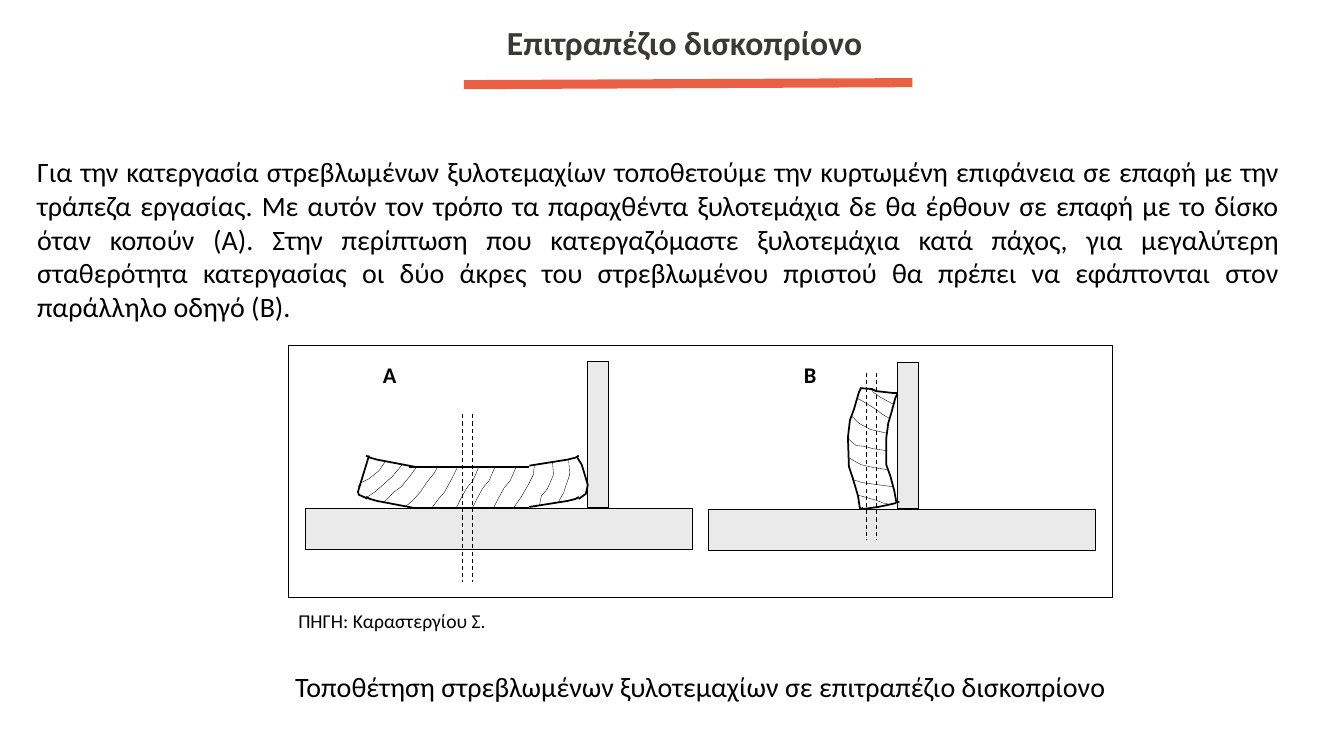
from lxml import etree
from pptx import Presentation
from pptx.dml.color import RGBColor
from pptx.enum.dml import MSO_LINE
from pptx.enum.shapes import MSO_CONNECTOR, MSO_SHAPE
from pptx.enum.text import MSO_ANCHOR, PP_ALIGN
from pptx.oxml.ns import qn
from pptx.util import Inches, Pt

STRAIGHT = MSO_CONNECTOR.STRAIGHT
RECTANGLE = MSO_SHAPE.RECTANGLE
DASH = MSO_LINE.DASH
TOP, MIDDLE = MSO_ANCHOR.TOP, MSO_ANCHOR.MIDDLE
LEFT, CENTER, JUSTIFY = PP_ALIGN.LEFT, PP_ALIGN.CENTER, PP_ALIGN.JUSTIFY

BLACK, GRAY, CORAL, CHARCOAL = "000000", "EAEAEA", "EA6045", "3B3838"
OUTLINE, GRAIN, THIN = 1.25, 0.25, 0.75
TABLE_TOP, TABLE_WIDTH, TABLE_HEIGHT = 1.45, 3.84, 0.41
FENCE_WIDTH = 0.21
BLADE_EDGES, BLADE_LENGTH = (1.56, 1.66), 1.66

TITLE = "Επιτραπέζιο δισκοπρίονο"
BODY = (
    "Για την κατεργασία στρεβλωμένων ξυλοτεμαχίων τοποθετούμε την κυρτωμένη "
    "επιφάνεια σε επαφή με την τράπεζα εργασίας. Με αυτόν τον τρόπο τα "
    "παραχθέντα ξυλοτεμάχια δε θα έρθουν σε επαφή με το δίσκο όταν κοπούν (Α). "
    "Στην περίπτωση που κατεργαζόμαστε ξυλοτεμάχια κατά πάχος, για μεγαλύτερη "
    "σταθερότητα κατεργασίας οι δύο άκρες του στρεβλωμένου πριστού θα πρέπει "
    "να εφάπτονται στον παράλληλο οδηγό (Β)."
)
SOURCE = "ΠΗΓΗ: Καραστεργίου Σ."
CAPTION = "Τοποθέτηση στρεβλωμένων ξυλοτεμαχίων σε επιτραπέζιο δισκοπρίονο"

FLAT_FACE = [
    [(0.6, 0.93), (0.64, 0.95), (0.71, 0.97), (1.08, 1.04)],
    [(1.03, 1.04), (2.22, 1.04)],
    [(2.22, 1.03), (2.6, 0.97), (2.68, 0.95), (2.71, 0.93)],
]
FLAT_ENDS = [
    [(0.63, 0.93), (0.52, 1.29), (0.53, 1.32), (0.6, 1.35), (0.61, 1.36)],
    [(2.69, 0.94), (2.74, 1.02), (2.8, 1.22), (2.78, 1.31), (2.71, 1.36)],
]
FLAT_THICKNESS = 0.41
FLAT_GRAIN = [
    [(0.79, 0.99), (0.73, 1.08), (0.63, 1.16), (0.55, 1.2), (0.52, 1.24)],
    [(0.96, 1.02), (0.86, 1.14), (0.77, 1.22), (0.69, 1.29), (0.6, 1.35)],
    [(1.11, 1.03), (1.04, 1.13), (0.95, 1.24), (0.88, 1.29), (0.78, 1.39)],
    [(1.31, 1.04), (1.28, 1.1), (1.2, 1.2), (1.14, 1.29), (1.07, 1.37),
     (1, 1.43), (1.04, 1.45)],
    [(1.51, 1.04), (1.44, 1.18), (1.38, 1.29), (1.32, 1.36), (1.26, 1.44)],
    [(2.27, 1.03), (2.26, 1.12), (2.21, 1.22), (2.14, 1.34), (2.07, 1.44)],
    [(2.45, 0.99), (2.46, 1.12), (2.4, 1.26), (2.34, 1.33), (2.32, 1.43)],
    [(2.61, 0.96), (2.62, 1.12), (2.56, 1.3), (2.52, 1.37), (2.51, 1.39)],
]
MIDDLE_GRAIN = [(1.72, 1.04), (1.66, 1.18), (1.6, 1.25), (1.54, 1.36), (1.5, 1.44)]
MIDDLE_GRAIN_SHIFTS = (0, 0.16, 0.37)

UPRIGHT_OUTLINE = [
    [(1.51, 0.25), (1.49, 0.29), (1.44, 0.46), (1.4, 0.57), (1.38, 0.74),
     (1.39, 1.03), (1.43, 1.15), (1.48, 1.32), (1.5, 1.45), (1.53, 1.44)],
    [(1.87, 0.31), (1.85, 0.35), (1.81, 0.5), (1.78, 0.6), (1.76, 0.75),
     (1.76, 1.01), (1.8, 1.12), (1.84, 1.27), (1.86, 1.38), (1.89, 1.38)],
    [(1.5, 0.25), (1.62, 0.26), (1.66, 0.28), (1.84, 0.3), (1.87, 0.3)],
    [(1.53, 1.45), (1.68, 1.43), (1.82, 1.4), (1.86, 1.39)],
]
UPRIGHT_GRAIN = [
    [(1.61, 0.26), (1.63, 0.29), (1.7, 0.34), (1.81, 0.4), (1.83, 0.41)],
    [(1.47, 0.35), (1.56, 0.4), (1.67, 0.47), (1.72, 0.51), (1.79, 0.55)],
    [(1.42, 0.53), (1.49, 0.6), (1.6, 0.66), (1.73, 0.69), (1.77, 0.7)],
    [(1.38, 0.75), (1.46, 0.82), (1.56, 0.83), (1.62, 0.85), (1.76, 0.87)],
    [(1.39, 0.94), (1.42, 0.96), (1.51, 1.01), (1.64, 1.04), (1.78, 1.06)],
    [(1.43, 1.16), (1.53, 1.19), (1.76, 1.22), (1.82, 1.23)],
    [(1.47, 1.31), (1.58, 1.34), (1.65, 1.36), (1.73, 1.39), (1.78, 1.4)],
]


def color(value):
    """Turn a hex string into a colour."""
    return RGBColor.from_string(value)


def format_text(shape, text, size, alignment=LEFT, bold=False, ink=BLACK):
    """Write one paragraph and set its font."""
    shape.text_frame.text = text
    paragraph = shape.text_frame.paragraphs[0]
    paragraph.alignment = alignment
    paragraph.font.name = "Calibri"
    paragraph.font.size = Pt(size)
    paragraph.font.bold = bold
    paragraph.font.color.rgb = color(ink)


def add_text(slide, box, text, size, alignment=LEFT, bold=False, wrap=True, anchor=TOP):
    """Add a text box."""
    shape = slide.shapes.add_textbox(*map(Inches, box))
    shape.text_frame.word_wrap = wrap
    shape.text_frame.vertical_anchor = anchor
    format_text(shape, text, size, alignment, bold)


def add_rectangle(slide, box, fill=None):
    """Add a thinly outlined rectangle."""
    shape = slide.shapes.add_shape(RECTANGLE, *map(Inches, box))
    shape.shadow.inherit = False
    if fill:
        shape.fill.solid()
        shape.fill.fore_color.rgb = color(fill)
    else:
        shape.fill.background()
    shape.line.color.rgb = color(BLACK)
    shape.line.width = Pt(THIN)


def add_line(slide, start, end, width, ink=BLACK, dash=None):
    """Add a straight line without shadow."""
    connector = slide.shapes.add_connector(STRAIGHT, *map(Inches, start + end))
    connector.line.color.rgb = color(ink)
    connector.line.width = Pt(width)
    connector.line.dash_style = dash
    etree.SubElement(connector.element.spPr, qn("a:effectLst"))


def add_strokes(slide, origin, strokes, width, shift=(0, 0)):
    """Draw open outlines measured from an origin."""
    left, top = origin[0] + shift[0], origin[1] + shift[1]
    for stroke in strokes:
        points = [(Inches(left + x), Inches(top + y)) for x, y in stroke]
        builder = slide.shapes.build_freeform(*points[0])
        builder.add_line_segments(points[1:], close=False)
        shape = builder.convert_to_shape()
        shape.shadow.inherit = False
        shape.fill.background()
        shape.line.color.rgb = color(BLACK)
        shape.line.width = Pt(width)


def add_title(slide, box):
    """Place the title and the rule below it."""
    left, top, width, height = box
    title = slide.shapes.title
    title.left, title.top, title.width, title.height = map(Inches, box)
    frame = title.text_frame
    frame.margin_left = frame.margin_right = Inches(0.05)
    frame.margin_top = frame.margin_bottom = Inches(0.03)
    frame.vertical_anchor = TOP
    format_text(title, TITLE, 24, CENTER, True, CHARCOAL)
    add_line(slide, (left + 0.48, top + 0.65), (left + 4.93, top + 0.63), 6.5, CORAL)


def add_saw(slide, origin, fence_left):
    """Draw the saw table and its fence."""
    left, top = origin
    add_rectangle(slide, (left + fence_left, top, FENCE_WIDTH, TABLE_TOP), GRAY)
    add_rectangle(slide, (left, top + TABLE_TOP, TABLE_WIDTH, TABLE_HEIGHT), GRAY)


def add_blade(slide, origin, blade_top):
    """Draw the dashed edges of the blade."""
    left, top = origin[0], origin[1] + blade_top
    for edge in BLADE_EDGES:
        add_line(slide, (left + edge, top), (left + edge, top + BLADE_LENGTH), THIN, dash=DASH)


def add_flat_board(slide, origin):
    """Draw the warped board lying on the table."""
    for drop in (0, FLAT_THICKNESS):
        add_strokes(slide, origin, FLAT_FACE, OUTLINE, (0, drop))
    add_strokes(slide, origin, FLAT_ENDS, OUTLINE)
    add_strokes(slide, origin, FLAT_GRAIN, GRAIN)
    for shift in MIDDLE_GRAIN_SHIFTS:
        add_strokes(slide, origin, [MIDDLE_GRAIN], GRAIN, (shift, 0))


def add_upright_board(slide, origin):
    """Draw the warped board standing against the fence."""
    add_strokes(slide, origin, UPRIGHT_OUTLINE, OUTLINE)
    add_strokes(slide, origin, UPRIGHT_GRAIN, GRAIN)


def add_diagram(slide, box):
    """Draw both cutting positions in a frame."""
    left, top = box[:2]
    flat, upright = (left + 0.17, top + 0.16), (left + 4.17, top + 0.17)
    add_saw(slide, flat, 2.8)
    add_flat_board(slide, flat)
    add_blade(slide, flat, 0.52)
    add_saw(slide, upright, 1.87)
    add_upright_board(slide, upright)
    add_blade(slide, upright, 0.1)
    add_rectangle(slide, box)
    add_text(slide, (left + 0.84, top + 0.1, 0.67, 0.5), "Α", 16, bold=True)
    add_text(slide, (left + 4.84, top + 0.1, 0.67, 0.5), "Β", 16, CENTER, True)


def main():
    """Build and save the slide."""
    presentation = Presentation()
    presentation.slide_width, presentation.slide_height = Inches(13.33), Inches(7.5)
    slide = presentation.slides.add_slide(presentation.slide_layouts[5])
    add_title(slide, (4.12, 0.19, 5.34, 0.45))
    add_text(slide, (0.27, 1.48, 12.52, 1.78), BODY, 20, JUSTIFY, anchor=MIDDLE)
    add_diagram(slide, (2.86, 3.43, 8.17, 2.5))
    add_text(slide, (2.86, 5.99, 2.08, 0.34), SOURCE, 14, wrap=False)
    add_text(slide, (2.83, 6.59, 8.37, 0.44), CAPTION, 20, wrap=False)
    presentation.save("out.pptx")


if __name__ == "__main__":
    main()
